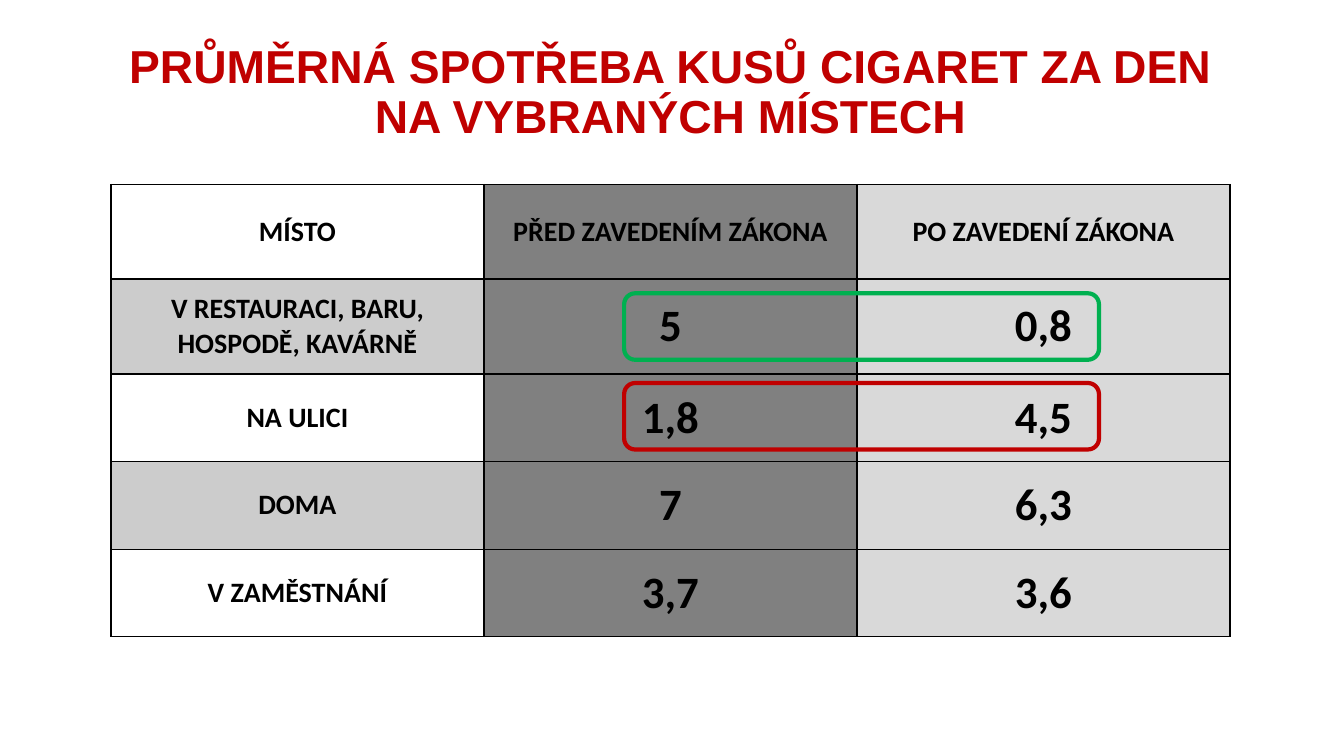
from lxml import etree
from pptx import Presentation
from pptx import util as u
from pptx.dml.color import RGBColor
from pptx.enum import shapes, text
from pptx.oxml.ns import qn

BLACK, RED, GREEN = "000000", "C00000", "00B050"
DARK, LIGHT, BAND = "808080", "D9D9D9", "CCCCCC"
HEAD = ["MÍSTO", "PŘED ZAVEDENÍM ZÁKONA", "PO ZAVEDENÍ ZÁKONA"]
DATA = [
    ["V RESTAURACI, BARU, HOSPODĚ, KAVÁRNĚ", "5", "0,8"],
    ["NA ULICI", "1,8", "4,5"],
    ["DOMA", "7", "6,3"],
    ["V ZAMĚSTNÁNÍ", "3,7", "3,6"],
]
ROWS = [0.94, 0.94, 0.87, 0.87, 0.87]


def color(code):
    return RGBColor.from_string(code)


def place(item, box):
    for name, val in zip(("left", "top", "width", "height"), box):
        setattr(item, name, u.Inches(val))


def write(frame, words, size, font, ink):
    frame.text = words
    par = frame.paragraphs[0]
    par.alignment = text.PP_ALIGN.CENTER
    form = {"size": u.Pt(size), "name": font, "bold": True}
    for name, val in form.items():
        setattr(par.runs[0].font, name, val)
    par.runs[0].font.color.rgb = color(ink)
    return par


def border(cell, widths):
    props = cell._tc.get_or_add_tcPr()
    for pos, (side, width) in enumerate(widths.items()):
        line = etree.Element(qn("a:ln" + side), w=str(u.Pt(width)))
        fill = etree.SubElement(line, qn("a:solidFill"))
        etree.SubElement(fill, qn("a:srgbClr"), val=BLACK)
        props.insert(pos, line)


def add_title(slide, box):
    title = slide.shapes.title
    place(title, box)
    frame = title.text_frame
    frame.word_wrap = True
    frame.vertical_anchor = text.MSO_ANCHOR.MIDDLE
    words = "PRŮMĚRNÁ SPOTŘEBA KUSŮ CIGARET ZA DEN NA VYBRANÝCH MÍSTECH"
    write(frame, words, 33, "Arial", RED).line_spacing = 0.9


def add_grid(slide, box):
    cells = [HEAD] + DATA
    grid = slide.shapes.add_table(len(cells), len(HEAD), *map(u.Inches, box)).table
    grid.first_row = grid.horz_banding = False
    for col in grid.columns:
        col.width = u.Inches(box[2] / len(HEAD))
    for r, line in enumerate(cells):
        grid.rows[r].height = u.Inches(ROWS[r])
        for c, words in enumerate(line):
            cell = grid.cell(r, c)
            cell.vertical_anchor = text.MSO_ANCHOR.MIDDLE
            write(cell.text_frame, words, 32 if r and c else 20, "Calibri", BLACK)
            # Place names alternate; each period has its own grey
            shade = [BAND if r % 2 else None, DARK, LIGHT][c]
            if shade:
                cell.fill.solid()
                cell.fill.fore_color.rgb = color(shade)
            else:
                cell.fill.background()
            border(cell, {"L": 1, "R": 1, "T": 2 if r == 1 else 1,
                          "B": 2 if r == 0 else 1})


def add_frame(slide, box, ink):
    ring = slide.shapes.add_shape(shapes.MSO_SHAPE.ROUNDED_RECTANGLE,
                                  *map(u.Inches, box))
    ring.shadow.inherit = False
    ring.fill.background()
    ring.line.color.rgb = color(ink)
    ring.line.width = u.Pt(3)


def main():
    deck = Presentation()
    deck.slide_width, deck.slide_height = u.Inches(13.33), u.Inches(7.5)
    slide = deck.slides.add_slide(deck.slide_layouts[5])
    add_title(slide, (0.9, 0.32, 11.5, 1.22))
    add_grid(slide, (1.1, 1.83, 11.1, sum(ROWS)))
    # Highlights of the two largest changes
    for n, ink in enumerate((GREEN, RED)):
        add_frame(slide, (6.19, 2.91 + 0.89 * n, 4.71, 0.66), ink)
    deck.save("out.pptx")


if __name__ == "__main__":
    main()
